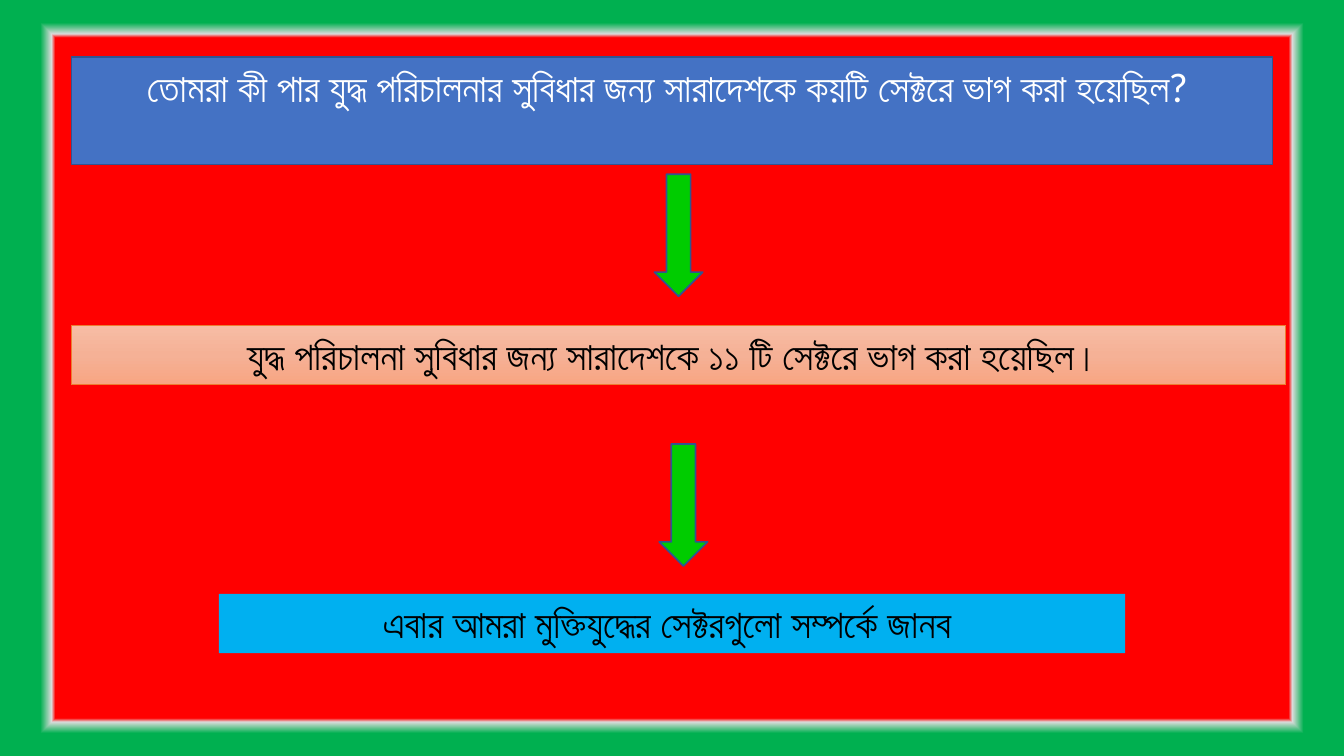
from dataclasses import dataclass

from lxml import etree
from pptx import Presentation
from pptx.dml.color import RGBColor
from pptx.enum.shapes import MSO_SHAPE
from pptx.enum.text import MSO_ANCHOR, MSO_AUTO_SIZE, PP_ALIGN
from pptx.oxml.ns import qn
from pptx.util import Inches, Pt

RECT, ARROW = MSO_SHAPE.RECTANGLE, MSO_SHAPE.DOWN_ARROW
TOP, CENTER, FIXED = MSO_ANCHOR.TOP, PP_ALIGN.CENTER, MSO_AUTO_SIZE.NONE
TITLE_ONLY = 5


@dataclass(frozen=True)
class Theme:
    font: str = "Lato"
    size: float = 23.3
    white: str = "FFFFFF"
    black: str = "000000"
    blue: str = "4472C4"
    navy: str = "325491"
    sky: str = "00B0F0"
    green: str = "00CC00"
    orange: str = "ED7D31"
    peach: tuple = ((0, "F7BDA5"), (50, "F5B196"), (100, "F8A582"))
    frame: tuple = ((0, "FF0000"), (90, "FF0000"), (91, "DBDBDB"),
                    (94, "00B050"), (100, "00B050"))


class Deck:
    """Places are left, top, width, height in percent of the slide."""

    def __init__(self, theme, width, height):
        self.theme = theme
        self.prs = Presentation()
        self.prs.slide_width, self.prs.slide_height = Inches(width), Inches(height)
        self.slide = self.prs.slides.add_slide(self.prs.slide_layouts[TITLE_ONLY])

    def place(self, at):
        wide, high = self.prs.slide_width, self.prs.slide_height
        return [round(part * full / 100) for part, full in zip(at, (wide, high) * 2)]

    def blend(self, owner, stops, radial=False):
        """Swap the solid fill of a slide or shape for a gradient."""
        grad = etree.Element(qn("a:gradFill"), rotWithShape="1")
        row = etree.SubElement(grad, qn("a:gsLst"))
        for pos, color in stops:
            stop = etree.SubElement(row, qn("a:gs"), pos=str(pos * 1000))
            etree.SubElement(stop, qn("a:srgbClr"), val=color)
        if radial:
            way = etree.SubElement(grad, qn("a:path"), path="rect")
            etree.SubElement(way, qn("a:fillToRect"), l="50000", t="50000",
                             r="50000", b="50000")
        else:
            etree.SubElement(grad, qn("a:lin"), ang="5400000", scaled="0")
        solid = owner.element.find(".//" + qn("a:solidFill"))
        solid.getparent().replace(solid, grad)

    def back(self, stops):
        self.slide.background.fill.solid()
        self.blend(self.slide, stops, radial=True)

    def paint(self, shape, fill, line=None, weight=1):
        shape.fill.solid()
        if isinstance(fill, tuple):
            self.blend(shape, fill)
        else:
            shape.fill.fore_color.rgb = RGBColor.from_string(fill)
        if line:
            shape.line.color.rgb = RGBColor.from_string(line)
            shape.line.width = Pt(weight)
        else:
            shape.line.fill.background()

    def label(self, shape, text, color):
        frame = shape.text_frame
        frame.text = text
        frame.word_wrap = True
        frame.auto_size = FIXED
        frame.vertical_anchor = TOP
        para = frame.paragraphs[0]
        para.alignment = CENTER
        font = para.runs[0].font
        font.name, font.size = self.theme.font, Pt(self.theme.size)
        font.color.rgb = RGBColor.from_string(color)

    def title(self, at, text, color, *look):
        shape = self.slide.shapes.title
        shape.left, shape.top, shape.width, shape.height = self.place(at)
        self.paint(shape, *look)
        self.label(shape, text, color)

    def shape(self, kind, at, *look):
        shape = self.slide.shapes.add_shape(kind, *self.place(at))
        shape.shadow.inherit = False
        self.paint(shape, *look)
        return shape

    def box(self, at, text, color, *look):
        self.label(self.shape(RECT, at, *look), text, color)

    def arrow(self, left, top):
        self.shape(ARROW, (left, top, 3.6, 16.16), self.theme.green, self.theme.navy)


def main():
    theme = Theme()
    deck = Deck(theme, 11.11, 6.25)
    deck.back(theme.frame)

    # Question
    deck.title((5.31, 7.52, 89.38, 14.24),
               "তোমরা কী পার যুদ্ধ পরিচালনার সুবিধার জন্য সারাদেশকে কয়টি সেক্টরে ভাগ করা হয়েছিল? ",
               theme.white, theme.blue, theme.navy)

    # Answer
    deck.arrow(48.69, 23.04)
    deck.box((5.31, 43.04, 90.37, 7.84),
             "যুদ্ধ পরিচালনা সুবিধার জন্য সারাদেশকে ১১ টি সেক্টরে ভাগ করা হয়েছিল। ",
             theme.black, theme.peach, theme.orange, 0.5)

    # Next topic
    deck.arrow(49.05, 58.72)
    deck.box((16.29, 78.56, 67.42, 7.84),
             "এবার আমরা মুক্তিযুদ্ধের সেক্টরগুলো সম্পর্কে জানব ",
             theme.black, theme.sky)

    deck.prs.save("out.pptx")


if __name__ == "__main__":
    main()
